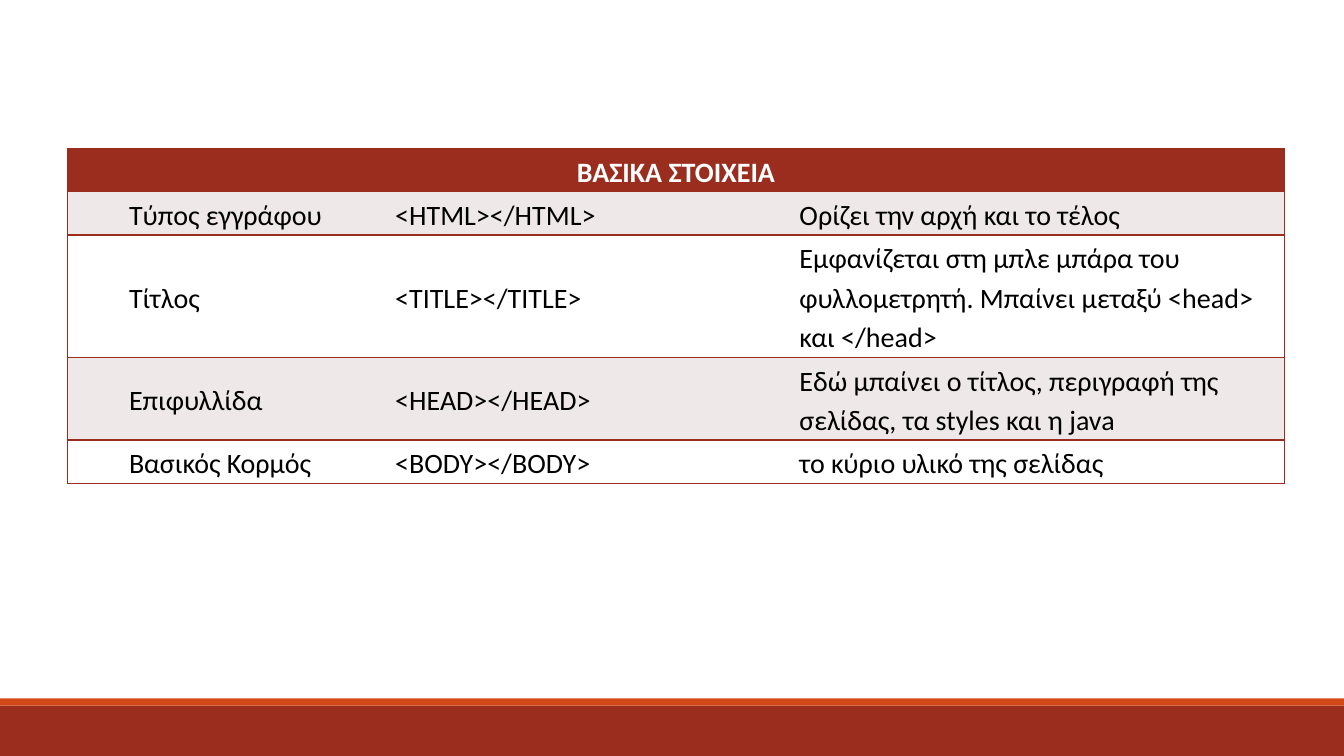
from lxml import etree
from pptx import Presentation
from pptx import util as u
from pptx.dml.color import RGBColor
from pptx.enum import shapes, text
from pptx.oxml import ns

BRICK = RGBColor(0x9B, 0x2D, 0x1F)
ORANGE = RGBColor(0xD3, 0x48, 0x17)
PALE = RGBColor(0xEF, 0xE8, 0xE8)
WHITE = RGBColor(0xFF, 0xFF, 0xFF)
BLACK = RGBColor(0, 0, 0)

HEADING = "ΒΑΣΙΚΑ ΣΤΟΙΧΕΙΑ"
ELEMENTS = [
    ("Τύπος εγγράφου", "<HTML></HTML>", "Ορίζει την αρχή και το τέλος"),
    ("Τίτλος", "<TITLE></TITLE>",
     "Εμφανίζεται στη μπλε μπάρα του φυλλομετρητή. Μπαίνει μεταξύ <head> και </head>"),
    ("Επιφυλλίδα", "<HEAD></HEAD>",
     "Εδώ μπαίνει ο τίτλος, περιγραφή της σελίδας, τα styles και η java"),
    ("Bασικός Κορμός", "<BODY></BODY>", "το κύριο υλικό της σελίδας"),
]
COLUMN_WIDTHS = [0.59, 2.64, 4.01, 4.83]
ROW_HEIGHTS = [0.37, 0.37, 1.08, 0.72, 0.37]

MARGIN = u.Inches(0.02)
CELL_FORMAT = {"vertical_anchor": text.MSO_ANCHOR.MIDDLE, "margin_left": MARGIN,
               "margin_right": MARGIN, "margin_top": MARGIN, "margin_bottom": MARGIN}
PARAGRAPH_FORMAT = {"line_spacing": 1.15, "space_after": u.Pt(10)}
FONT_FORMAT = {"name": "Calibri", "size": u.Pt(20)}


def apply_format(target, values):
    for name, value in values.items():
        setattr(target, name, value)


def add_bar(slide, top, height, color):
    bar = slide.shapes.add_shape(shapes.MSO_SHAPE.RECTANGLE, 0, u.Inches(top),
                                 u.Inches(13.33), u.Inches(height))
    bar.shadow.inherit = False
    bar.fill.solid()
    bar.fill.fore_color.rgb = color
    bar.line.fill.background()


def set_borders(cell, visible_sides):
    """Draw 1 pt lines on the named sides and clear the others."""
    properties = cell._tc.get_or_add_tcPr()
    for side in "LRTB":
        line = etree.SubElement(properties, ns.qn(f"a:ln{side}"), w=str(u.Pt(1)))
        if side in visible_sides:
            fill = etree.SubElement(line, ns.qn("a:solidFill"))
            etree.SubElement(fill, ns.qn("a:srgbClr"), val=str(BRICK))
        else:
            etree.SubElement(line, ns.qn("a:noFill"))


def style_cell(cell, fill, borders):
    set_borders(cell, borders)
    cell.fill.solid()
    cell.fill.fore_color.rgb = fill
    apply_format(cell, CELL_FORMAT)


def write_cell(cell, wording, color, bold=False, alignment=text.PP_ALIGN.LEFT):
    paragraph = cell.text_frame.paragraphs[0]
    apply_format(paragraph, {**PARAGRAPH_FORMAT, "alignment": alignment})
    run = paragraph.add_run()
    run.text = wording
    apply_format(run.font, {**FONT_FORMAT, "bold": bold})
    run.font.color.rgb = color


def add_elements_table(slide):
    frame = slide.shapes.add_table(
        len(ROW_HEIGHTS), len(COLUMN_WIDTHS), u.Inches(0.67), u.Inches(1.47),
        u.Inches(sum(COLUMN_WIDTHS)), u.Inches(sum(ROW_HEIGHTS)))
    table = frame.table
    for column, width in zip(table.columns, COLUMN_WIDTHS):
        column.width = u.Inches(width)
    for row, height in zip(table.rows, ROW_HEIGHTS):
        row.height = u.Inches(height)

    # Heading across all columns
    heading = table.cell(0, 0)
    heading.merge(table.cell(0, len(COLUMN_WIDTHS) - 1))
    for cell in table.rows[0].cells:
        style_cell(cell, BRICK, "LRTB")
    write_cell(heading, HEADING, WHITE, True, text.PP_ALIGN.CENTER)

    # Banded rows, with an empty first column as indent
    column_borders = ["LTB", "TB", "TB", "RTB"]
    for index, element in enumerate(ELEMENTS, 1):
        cells = list(table.rows[index].cells)
        for cell, borders in zip(cells, column_borders):
            style_cell(cell, PALE if index % 2 else WHITE, borders)
        for cell, wording in zip(cells[1:], element):
            write_cell(cell, wording, BLACK)


def main():
    presentation = Presentation()
    presentation.slide_width = u.Inches(13.33)
    presentation.slide_height = u.Inches(7.5)
    slide = presentation.slides.add_slide(presentation.slide_layouts[6])

    # Footer bars
    add_bar(slide, 7, 0.5, BRICK)
    add_bar(slide, 6.93, 0.07, ORANGE)

    add_elements_table(slide)
    presentation.save("out.pptx")


if __name__ == "__main__":
    main()
